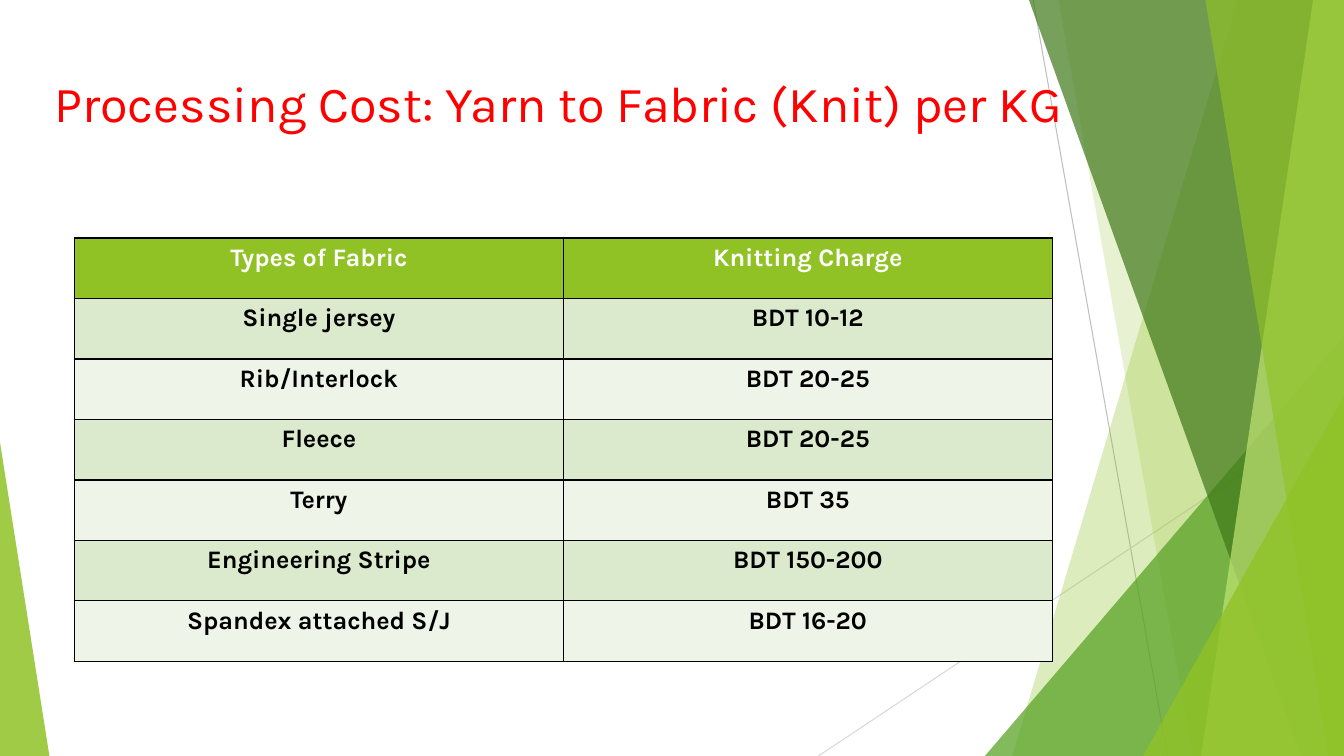
"""Build a slide with a table of knitting charges per kilogram of fabric."""
import pptx
import pptx.dml.color
import pptx.enum.shapes
import pptx.enum.text
import pptx.oxml
import pptx.oxml.ns
import pptx.util

WIDTH, HEIGHT = 960, 540
GREEN, BLACK, WHITE = "90C226", "000000", "FFFFFF"
Pt = pptx.util.Pt


def color(value):
    return pptx.dml.color.RGBColor.from_string(value)


class SlideBuilder:
    font = "Karla"
    bands = ("DBE9CD", "EEF4E8")

    def __init__(self, page):
        self.page = page

    def style(self, paragraph, size, value, bold=False):
        paragraph.font.name = self.font
        paragraph.font.size = Pt(size)
        paragraph.font.bold = bold
        paragraph.font.color.rgb = color(value)

    def paint(self, shape, value, opacity):
        shape.shadow.inherit = False
        shape.line.fill.background()
        shape.fill.solid()
        shape.fill.fore_color.rgb = color(value)
        tint = shape.fill._xPr.find(".//" + pptx.oxml.ns.qn("a:srgbClr"))
        alpha = pptx.oxml.parse_xml(
            f'<a:alpha {pptx.oxml.ns.nsdecls("a")} val="{opacity * 1000}"/>')
        tint.append(alpha)

    def line(self, start, end, value):
        connector = self.page.shapes.add_connector(
            pptx.enum.shapes.MSO_CONNECTOR.STRAIGHT,
            *(Pt(length) for length in start + end))
        connector.line.color.rgb = color(value)
        connector.line.width = Pt(0.75)
        connector._element.spPr.append(pptx.oxml.parse_xml(
            f'<a:effectLst {pptx.oxml.ns.nsdecls("a")}/>'))

    def ribbon(self, top_left, bottom_left, value, opacity):
        outline = self.page.shapes.build_freeform(Pt(top_left), Pt(0))
        outline.add_line_segments(
            [(Pt(x), Pt(y)) for x, y in
             ((WIDTH, 0), (WIDTH, HEIGHT), (bottom_left, HEIGHT))])
        self.paint(outline.convert_to_shape(), value, opacity)

    def corner(self, left, top, width, apex, value, opacity):
        shape = self.page.shapes.add_shape(
            pptx.enum.shapes.MSO_SHAPE.ISOSCELES_TRIANGLE,
            Pt(left), Pt(top), Pt(width), Pt(HEIGHT - top))
        shape.adjustments[0] = apex
        self.paint(shape, value, opacity)

    def title(self, text, left, top, width, height):
        box = self.page.shapes.add_textbox(
            Pt(left), Pt(top), Pt(width), Pt(height))
        box.text_frame.word_wrap = True
        paragraph = box.text_frame.paragraphs[0]
        paragraph.text = text
        self.style(paragraph, 36, "FF0000")

    def border(self, cell):
        properties = cell._tc.get_or_add_tcPr()
        for side in "LRTB":
            properties.append(pptx.oxml.parse_xml(
                f'<a:ln{side} {pptx.oxml.ns.nsdecls("a")} w="{Pt(1)}">'
                f'<a:solidFill><a:srgbClr val="{BLACK}"/></a:solidFill>'
                f'</a:ln{side}>'))

    def table(self, rows, left, top, width, row_height):
        table = self.page.shapes.add_table(
            len(rows), len(rows[0]), Pt(left), Pt(top),
            Pt(width), Pt(row_height * len(rows))).table
        table.horz_banding = False
        for index, row in enumerate(rows):
            fill = self.bands[(index - 1) % 2] if index else GREEN
            for column, text in enumerate(row):
                cell = table.cell(index, column)
                self.border(cell)
                cell.fill.solid()
                cell.fill.fore_color.rgb = color(fill)
                paragraph = cell.text_frame.paragraphs[0]
                paragraph.text = text
                paragraph.alignment = pptx.enum.text.PP_ALIGN.CENTER
                self.style(paragraph, 18, BLACK if index else WHITE, True)


def main():
    deck = pptx.Presentation()
    deck.slide_width, deck.slide_height = Pt(WIDTH), Pt(HEIGHT)
    builder = SlideBuilder(deck.slides.add_slide(deck.slide_layouts[6]))

    builder.line((738, 0), (834, HEIGHT), "BFBFBF")
    builder.line((WIDTH, 290), (584.6, HEIGHT), "D9D9D9")
    builder.ribbon(884, 723, GREEN, 30)
    builder.ribbon(756, 852, GREEN, 20)
    builder.corner(703.5, 240, 256.5, 1, "54A021", 72)
    builder.ribbon(735, 929.5, "3F7819", 70)
    builder.ribbon(938, 858, "C0E474", 70)
    builder.ribbon(861, 949, GREEN, 65)
    builder.corner(816.5, 283, 143.5, 1, GREEN, 80)
    builder.corner(0, 316, 35.3, 0, GREEN, 85)

    builder.title("Processing Cost: Yarn to Fabric (Knit) per KG",
                  31.7, 48.2, 764, 103.7)
    charges = [
        ("Types of Fabric", "Knitting Charge"),
        ("Single jersey", "BDT 10-12"),
        ("Rib/Interlock", "BDT 20-25"),
        ("Fleece", "BDT 20-25"),
        ("Terry", "BDT 35"),
        ("Engineering Stripe", "BDT 150-200"),
        ("Spandex attached S/J", "BDT 16-20"),
    ]
    builder.table(charges, 53.2, 170, 698.4, 43.2)
    deck.save("out.pptx")


if __name__ == "__main__":
    main()
